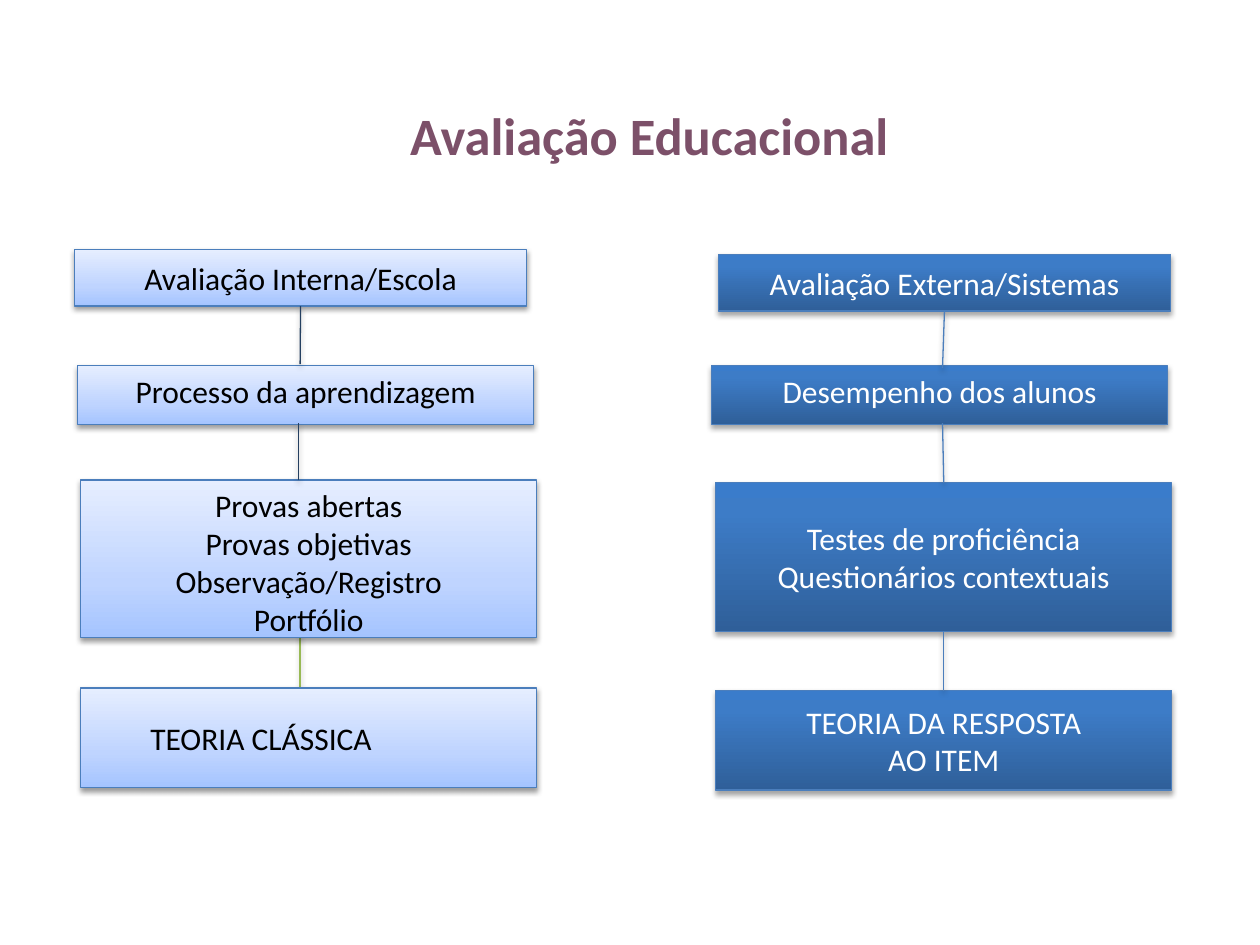
from lxml.etree import SubElement as Sub
from pptx import Presentation
from pptx.dml.color import RGBColor as RGB
from pptx.enum.shapes import MSO_CONNECTOR as Conn, MSO_SHAPE as Form
from pptx.enum.text import MSO_ANCHOR as Anchor, MSO_AUTO_SIZE as Fit, PP_ALIGN as Align
from pptx.oxml.ns import qn
from pptx.util import Cm, Pt

INK = {"title": "7C5069", "edge": "4B7EBC", "navy": "254061",
       "green": "98B955", "black": "000000", "white": "FFFFFF"}
# Gradient stops run from the bottom edge to the top
PALE = {"stops": [(0, "A4C4FF"), (35, "BFD4FF"), (100, "E6EEFF")],
        "text": "black", "shade": (1.6, 38)}
DEEP = {"stops": [(0, "2F5F99"), (80, "3D7CC7"), (100, "3A7CCB")],
        "text": "white", "shade": (1.8, 35)}

# Left, top, width, height in cm; anchor; lines of text
INNER = [
    (1.5, 5.03, 9.12, 1.14, Anchor.MIDDLE, ["Avaliação Interna/Escola"]),
    (1.57, 7.37, 9.19, 1.19, Anchor.TOP, ["Processo da aprendizagem"]),
    (1.63, 9.68, 9.19, 3.18, Anchor.TOP,
     ["Provas abertas", "Provas objetivas", "Observação/Registro", "Portfólio"]),
    (1.63, 13.87, 9.19, 2.01, Anchor.MIDDLE, ["TEORIA CLÁSSICA"]),
]
OUTER = [
    (14.48, 5.13, 9.12, 1.14, Anchor.MIDDLE, ["Avaliação Externa/Sistemas"]),
    (14.35, 7.37, 9.19, 1.19, Anchor.TOP, ["Desempenho dos alunos"]),
    (14.43, 9.73, 9.19, 3, Anchor.MIDDLE,
     ["Testes de proficiência", "Questionários contextuais"]),
    (14.43, 13.92, 9.19, 2.01, Anchor.MIDDLE, ["TEORIA DA RESPOSTA", "AO ITEM"]),
]


def shade(item, dist, alpha):
    """Drop a soft shadow straight down."""
    effects = Sub(item._element.spPr, qn("a:effectLst"))
    outer = Sub(effects, qn("a:outerShdw"), blurRad=str(Pt(3.1)),
                dist=str(Pt(dist)), dir="5400000", rotWithShape="0")
    color = Sub(outer, qn("a:srgbClr"), val=INK["black"])
    Sub(color, qn("a:alpha"), val=str(alpha * 1000))


def stroke(item, name):
    item.line.color.rgb = RGB.from_string(INK[name])
    item.line.width = Pt(0.75)


def blend(box, stops):
    box.fill.gradient()
    box.fill.gradient_angle = 90
    ramp = box._element.spPr.find(".//" + qn("a:gsLst"))
    ramp.clear()
    for place, color in stops:
        stop = Sub(ramp, qn("a:gs"), pos=str(place * 1000))
        Sub(stop, qn("a:srgbClr"), val=color)


def write(frame, lines, size, color, bold=False):
    frame.word_wrap = True
    frame.text = "\n".join(lines)
    for par in frame.paragraphs:
        par.alignment = Align.CENTER
        par.font.name = "Calibri"
        par.font.size = Pt(size)
        par.font.bold = bold
        par.font.color.rgb = RGB.from_string(INK[color])


def add_box(slide, look, left, top, width, height, anchor, lines):
    box = slide.shapes.add_shape(Form.RECTANGLE, Cm(left), Cm(top), Cm(width), Cm(height))
    blend(box, look["stops"])
    stroke(box, "edge")
    shade(box, *look["shade"])
    write(box.text_frame, lines, 18, look["text"])
    box.text_frame.vertical_anchor = anchor
    return box


def add_link(slide, color, x1, y1, x2, y2, head=None, tail=None):
    link = slide.shapes.add_connector(Conn.STRAIGHT, Cm(x1), Cm(y1), Cm(x2), Cm(y2))
    if head is not None:
        link.begin_connect(head, 2)
    if tail is not None:
        link.end_connect(tail, 0)
    stroke(link, color)
    shade(link, 1.8, 35)


def add_title(slide, text):
    title = slide.shapes.title
    title.left, title.top, title.width, title.height = Cm(0.79), Cm(1.93), Cm(24.61), Cm(1.55)
    write(title.text_frame, [text], 30, "title", True)
    title.text_frame.auto_size = Fit.NONE
    title.text_frame.vertical_anchor = Anchor.MIDDLE


def main():
    deck = Presentation()
    deck.slide_width, deck.slide_height = Cm(25.4), Cm(19.05)
    slide = deck.slides.add_slide(deck.slide_layouts[5])
    add_title(slide, "Avaliação Educacional")

    # The last left link lies behind its boxes
    add_link(slide, "green", 6.05, 12.65, 6.05, 13.84)

    # Two columns of boxes
    inner = [add_box(slide, PALE, *row) for row in INNER]
    outer = [add_box(slide, DEEP, *row) for row in OUTER]

    # The last left box is set from the left, with an indent
    theory = inner[-1].text_frame
    theory.paragraphs[0].alignment = Align.LEFT
    theory.margin_left = Cm(1.4)

    # Links down each column
    add_link(slide, "navy", 6.05, 6.17, 6.05, 7.34, head=inner[0])
    add_link(slide, "navy", 6.02, 8.53, 6.02, 9.68)
    add_link(slide, "edge", 19, 6.27, 19, 7.42, head=outer[0])
    add_link(slide, "edge", 19, 8.53, 19.02, 9.73, tail=outer[2])
    add_link(slide, "edge", 19.02, 12.73, 19.02, 13.92, head=outer[2], tail=outer[3])

    deck.save("out.pptx")


if __name__ == "__main__":
    main()
